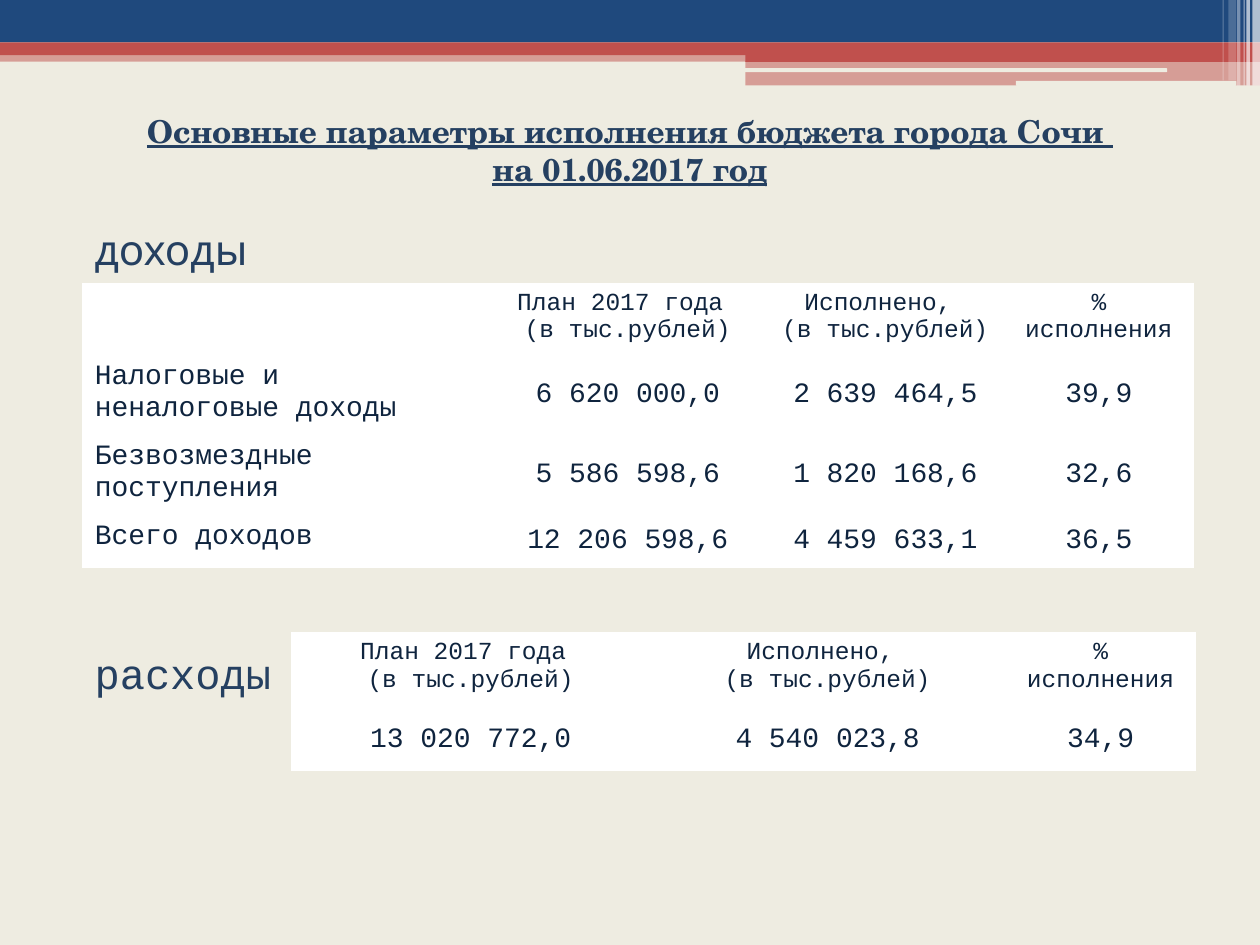
from dataclasses import dataclass

from lxml.etree import SubElement
from pptx import Presentation
from pptx.dml.color import RGBColor
from pptx.enum.shapes import MSO_SHAPE
from pptx.enum.text import MSO_ANCHOR, PP_ALIGN
from pptx.oxml.ns import qn
from pptx.util import Pt


@dataclass(frozen=True)
class Theme:
    """Colours, fonts and type sizes of the slide."""
    paper: str = "EEECE1"
    blue: str = "1F497D"
    red: str = "C0504D"
    white: str = "FFFFFF"
    heading: str = "254061"
    ink: str = "0F243E"
    title_font: str = "TeX Gyre Schola"
    label_font: str = "Karla"
    mono: str = "Courier New"
    title_size: int = 18
    label_size: int = 24
    head_size: int = 14
    body_size: int = 16


T = Theme()
TITLE = ["Основные параметры исполнения бюджета города Сочи ", "на 01.06.2017 год"]
HEADS = ["План 2017 года \n(в тыс.рублей)", "Исполнено, \n(в тыс.рублей)", "% исполнения"]
INCOME = [
    ["", *HEADS],
    ["Налоговые и неналоговые доходы", "6 620 000,0", "2 639 464,5", "39,9"],
    ["Безвозмездные поступления", "5 586 598,6", "1 820 168,6", "32,6"],
    ["Всего доходов", "12 206 598,6", "4 459 633,1", "36,5"],
]
EXPENSES = [HEADS, ["13 020 772,0", "4 540 023,8", "34,9"]]

BANDS = [
    (0, 28.8, 720, 6.5, T.red, 50),
    (0, 0, 720, 24.3, T.blue, 100),
    (0, 24.3, 720, 7.2, T.red, 100),
    (426, 28.2, 294, 7.2, T.red, 100),
    (426, 34.8, 294, 14, T.red, 50),
]
GROOVES = [(425.5, 39, 241.5, 2.2), (580.5, 46.2, 126, 2.8)]
STRIPES = [
    (715.7, 4.3, 49, 65),
    (712.2, 2, 49, 65),
    (710.6, 0.7, 49, 60),
    (706.8, 2, 49, 40),
    (702, 4.3, 46, 20),
    (698.6, 0.7, 46, 30),
]


def rgb(color):
    """Turn a hex string into a colour."""
    return RGBColor.from_string(color)


def add_bar(s, x, y, w, h, color, opacity=100, kind=MSO_SHAPE.RECTANGLE):
    """Add a borderless bar with the given opacity in percent."""
    sp = s.shapes.add_shape(kind, Pt(x), Pt(y), Pt(w), Pt(h))
    sp.shadow.inherit = False
    sp.line.fill.background()
    sp.fill.solid()
    sp.fill.fore_color.rgb = rgb(color)
    if opacity < 100:
        clr = sp.fill._xPr.find(qn("a:solidFill"))[0]
        SubElement(clr, qn("a:alpha"), val=str(opacity * 1000))


def add_banner(s):
    """Add the decorated strip along the top edge."""
    for band in BANDS:
        add_bar(s, *band)
    for groove in GROOVES:
        add_bar(s, *groove, T.paper, kind=MSO_SHAPE.ROUNDED_RECTANGLE)
    for x, w, h, opacity in STRIPES:
        add_bar(s, x, 0, w, h, T.white, opacity)


def style(p, font, size, color, align=PP_ALIGN.LEFT):
    """Set font and alignment of a paragraph."""
    p.alignment = align
    p.font.name, p.font.size, p.font.color.rgb = font, Pt(size), rgb(color)


def set_title(s, lines):
    """Place and format the title placeholder."""
    sp = s.shapes.title
    sp.left, sp.top, sp.width, sp.height = Pt(17), Pt(60.5), Pt(686), Pt(51)
    tf = sp.text_frame
    tf.text = "\n".join(lines)
    tf.vertical_anchor = MSO_ANCHOR.TOP
    for p in tf.paragraphs:
        style(p, T.title_font, T.title_size, T.heading, PP_ALIGN.CENTER)
        p.font.bold = p.font.underline = True


def add_label(s, y, text, font):
    """Add a section label at the left margin."""
    tf = s.shapes.add_textbox(Pt(47), Pt(y), Pt(158), Pt(36)).text_frame
    tf.word_wrap = True
    tf.text = text
    style(tf.paragraphs[0], font, T.label_size, T.heading)


def set_borders(cell, bottom):
    """Draw white borders, with the bottom one of the given width."""
    pr = cell._tc.get_or_add_tcPr()
    for i, (side, width) in enumerate(zip("LRTB", (1, 1, 1, bottom))):
        ln = pr.makeelement(qn(f"a:ln{side}"), {"w": str(Pt(width))})
        fill = SubElement(ln, qn("a:solidFill"))
        SubElement(fill, qn("a:srgbClr"), val=T.white)
        pr.insert(i, ln)


def fill_cell(cell, text, header, numeric):
    """Write and format one table cell."""
    cell.text = text
    cell.fill.solid()
    cell.fill.fore_color.rgb = rgb(T.white)
    set_borders(cell, 3 if header else 1)
    if numeric and not header:
        cell.vertical_anchor = MSO_ANCHOR.MIDDLE
    for p in cell.text_frame.paragraphs:
        style(p, T.mono, T.head_size if header else T.body_size, T.ink,
              PP_ALIGN.CENTER if numeric else PP_ALIGN.LEFT)


def add_budget_table(s, x, y, rows, widths, heights, row_names=False):
    """Add a budget table, optionally with a column of row names."""
    tbl = s.shapes.add_table(len(rows), len(widths), Pt(x), Pt(y),
                             Pt(sum(widths)), Pt(sum(heights))).table
    tbl.first_row = tbl.horz_banding = False
    for col, w in zip(tbl.columns, widths):
        col.width = Pt(w)
    for i, (row, h) in enumerate(zip(rows, heights)):
        tbl.rows[i].height = Pt(h)
        for j, text in enumerate(row):
            fill_cell(tbl.cell(i, j), text, i == 0, j > 0 or not row_names)


def main():
    """Build the budget slide."""
    prs = Presentation()
    prs.slide_width, prs.slide_height = Pt(720), Pt(540)
    s = prs.slides.add_slide(prs.slide_layouts[5])
    s.background.fill.solid()
    s.background.fill.fore_color.rgb = rgb(T.paper)
    add_banner(s)
    set_title(s, TITLE)
    add_label(s, 124, "доходы", T.label_font)
    add_budget_table(s, 47, 162, INCOME, [232.5, 158.5, 136, 108],
                     [39, 43.5, 43.5, 30], row_names=True)
    add_label(s, 366.5, "расходы", T.mono)
    add_budget_table(s, 167, 361.5, EXPENSES, [204, 204, 108], [44.6, 34])
    prs.save("out.pptx")


if __name__ == "__main__":
    main()
